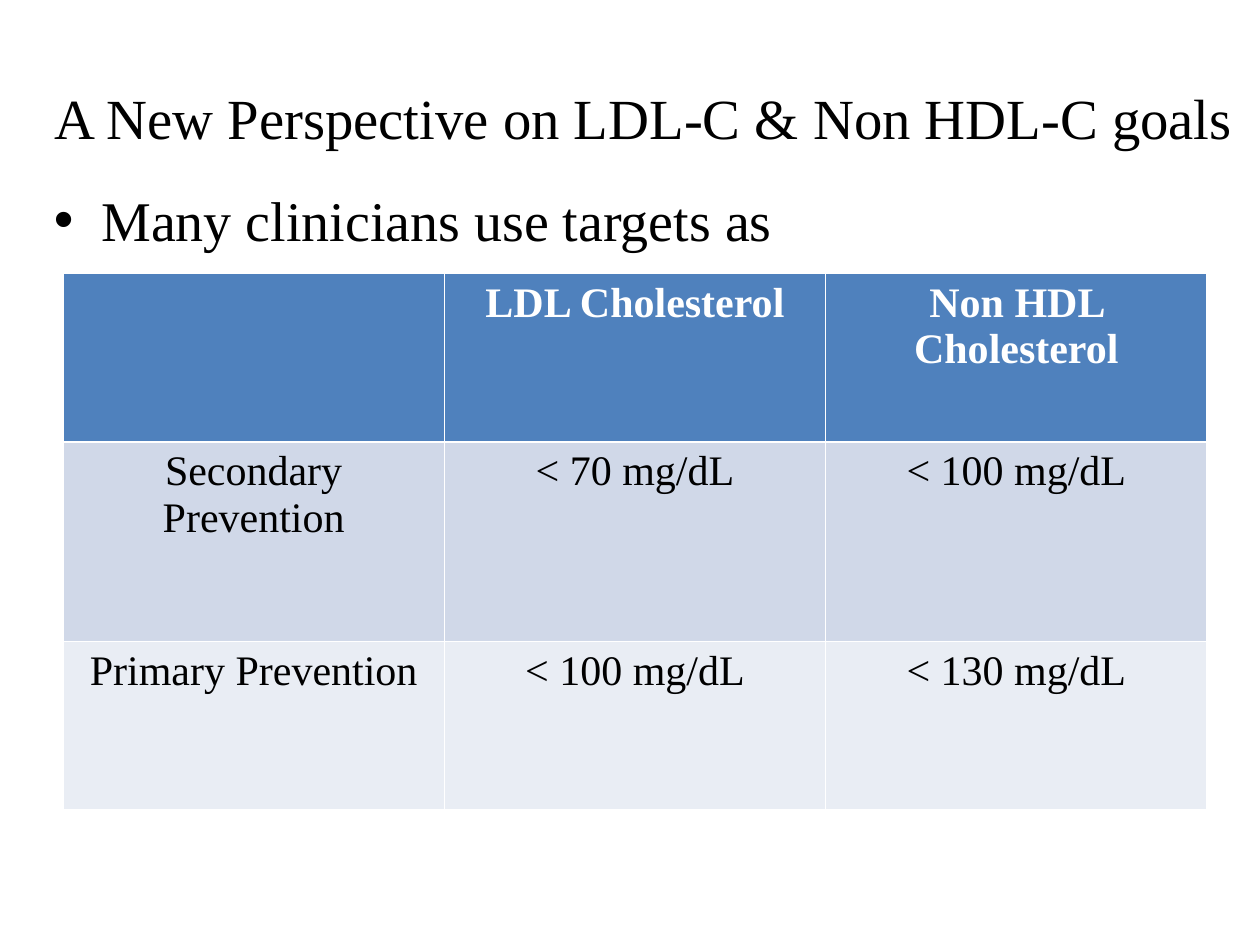
from pptx import Presentation
from pptx.dml.color import RGBColor
from pptx.enum.text import MSO_ANCHOR, MSO_AUTO_SIZE, PP_ALIGN
from pptx.util import Inches, Pt
from lxml import etree

CENTER, LEFT = PP_ALIGN.CENTER, PP_ALIGN.LEFT
MIDDLE = MSO_ANCHOR.MIDDLE
NO_FIT = MSO_AUTO_SIZE.NONE
A = "{http://schemas.openxmlformats.org/drawingml/2006/main}"


def rgb(value):
    return RGBColor.from_string(value)


def write(tf, text, size, color="000000", bold=False, align=CENTER):
    p = tf.paragraphs[0]
    p.text = text
    p.alignment = align
    p.font.name = "Times New Roman"
    p.font.size = Pt(size)
    p.font.bold = bold
    p.font.color.rgb = rgb(color)
    return p


prs = Presentation()
prs.slide_width, prs.slide_height = Inches(10), Inches(7.5)
s = prs.slides.add_slide(prs.slide_layouts[5])

title = s.shapes.title
title.left, title.top = Inches(0.33), Inches(0.3)
title.width, title.height = Inches(9.67), Inches(1.25)
tf = title.text_frame
tf.auto_size = NO_FIT
tf.vertical_anchor = MIDDLE
write(tf, "A New Perspective on LDL-C & Non HDL-C goals ", 32.4)

body = s.shapes.add_textbox(Inches(0.33), Inches(1.42), Inches(9.42), Inches(5.67))
tf = body.text_frame
tf.word_wrap = True
p = write(tf, "Many clinicians use targets as", 32, align=LEFT)
p.space_before = Pt(6.4)
pPr = p._p.get_or_add_pPr()
indent = Inches(0.375)
pPr.set("marL", str(indent))
pPr.set("indent", str(-indent))
bullet = etree.Element(A + "buChar", char="•")
pPr.find(A + "spcBef").addnext(bullet)
bullet.addprevious(etree.Element(A + "buFont", typeface="Arial"))

rows = [
    ("4F81BD", 1.34, ["", "LDL Cholesterol", "Non HDL Cholesterol"]),
    ("D0D8E8", 1.58, ["Secondary Prevention", "< 70 mg/dL", "< 100 mg/dL"]),
    ("E9EDF4", 1.34, ["Primary Prevention", "< 100 mg/dL", "< 130 mg/dL"]),
]
table = s.shapes.add_table(
    len(rows), 3, Inches(0.5), Inches(2.17), Inches(9.08), Inches(4.25)
).table
for r, (fill, height, texts) in enumerate(rows):
    table.rows[r].height = Inches(height)
    header = r == 0
    for c, text in enumerate(texts):
        cell = table.cell(r, c)
        cell.fill.solid()
        cell.fill.fore_color.rgb = rgb(fill)
        write(cell.text_frame, text, 24, "FFFFFF" if header else "000000", header)

prs.save("out.pptx")
